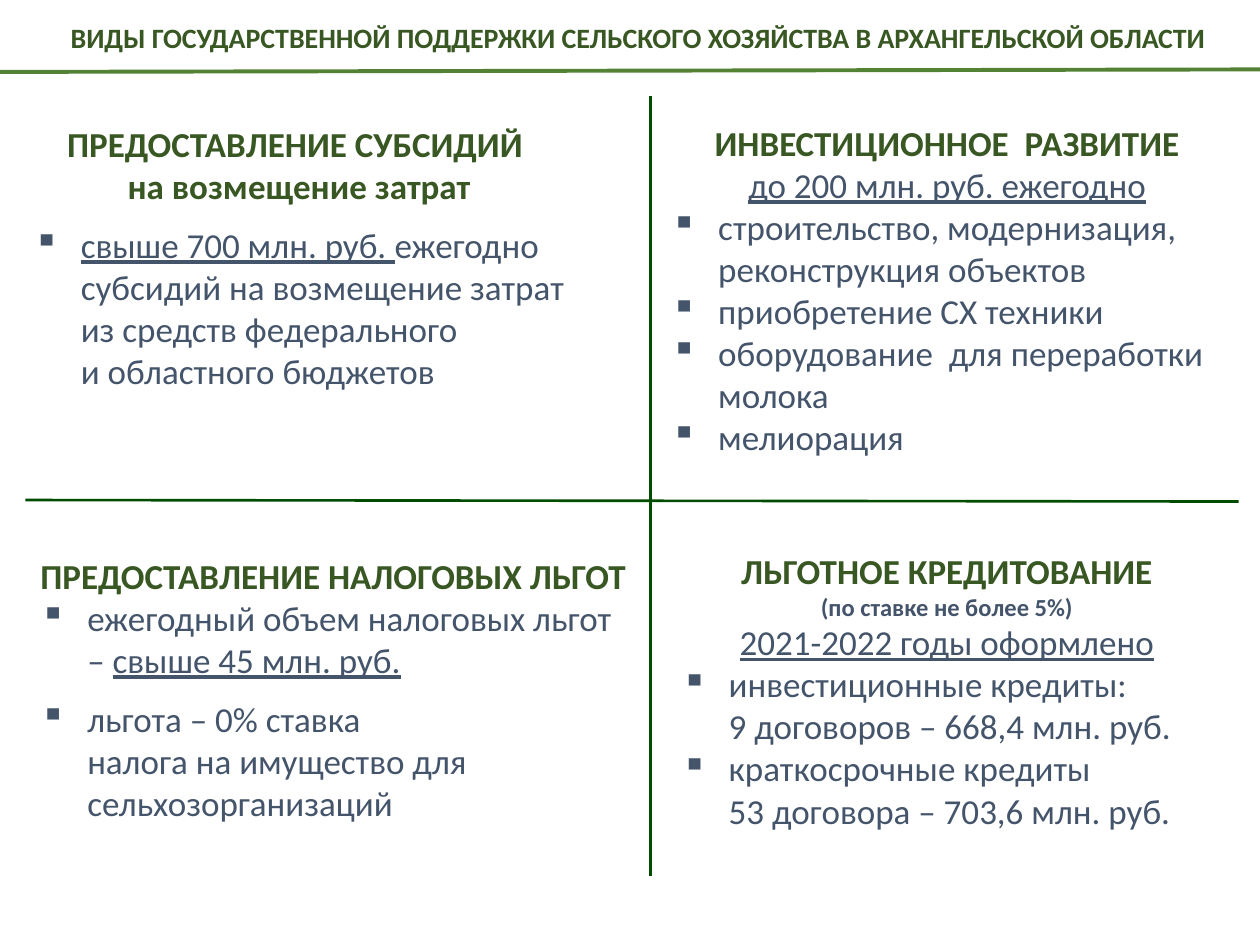
import copy
from dataclasses import dataclass

import pptx
import pptx.dml.color
import pptx.enum.shapes
import pptx.enum.text
import pptx.oxml
import pptx.oxml.ns
import pptx.util
from pptx.util import Cm, Pt

RGBColor = pptx.dml.color.RGBColor
PP_ALIGN = pptx.enum.text.PP_ALIGN

GREEN = RGBColor(0x38, 0x57, 0x23)
SLATE = RGBColor(0x44, 0x54, 0x6A)
RULE_GREEN = RGBColor(0x54, 0x82, 0x35)
CROSS_GREEN = RGBColor(0x00, 0x4C, 0x00)

HEADING = {"size": Pt(20), "bold": True, "color": GREEN}
TITLE = HEADING | {"size": Pt(16)}
BODY = {"size": Pt(20), "bold": False, "color": SLATE}
KEY = BODY | {"underline": True}
NOTE = {"size": Pt(14), "bold": True, "color": SLATE}

INDENT = Cm(0.95)
GAP = Pt(9.75)


@dataclass
class Para:
    runs: list[tuple[str, dict]]
    bullet: bool = False
    before: int = 0


@dataclass
class Block:
    left: float
    top: float
    width: float
    height: float
    paras: list[Para]


@dataclass
class Rule:
    start: tuple[float, float]
    end: tuple[float, float]
    color: RGBColor
    weight: float


def centred(text: str, fmt: dict) -> Para:
    return Para([(text, fmt)])


def bullet(*runs: tuple[str, dict], before: int = 0) -> Para:
    return Para(list(runs), True, before)


BLOCKS = [
    Block(0.97, 0.28, 23.8, 0.94, [
        centred("ВИДЫ ГОСУДАРСТВЕННОЙ ПОДДЕРЖКИ СЕЛЬСКОГО ХОЗЯЙСТВА "
                "В АРХАНГЕЛЬСКОЙ ОБЛАСТИ", TITLE),
    ]),
    Block(0.43, 2.31, 11.2, 5.74, [
        centred("ПРЕДОСТАВЛЕНИЕ СУБСИДИЙ \nна возмещение затрат", HEADING),
        bullet(("свыше 700 млн. руб. ", KEY),
               ("ежегодно \nсубсидий на возмещение затрат из средств "
                "федерального \nи областного бюджетов", BODY), before=GAP),
    ]),
    Block(13.28, 2.29, 11.63, 7.09, [
        centred("ИНВЕСТИЦИОННОЕ  РАЗВИТИЕ", HEADING),
        centred("до 200 млн. руб. ежегодно", KEY),
        bullet(("строительство, модернизация, реконструкция объектов", BODY)),
        bullet(("приобретение СХ техники", BODY)),
        bullet(("оборудование  для переработки молока", BODY)),
        bullet(("мелиорация", BODY)),
    ]),
    Block(0.56, 11.02, 12.32, 5.74, [
        centred("ПРЕДОСТАВЛЕНИЕ НАЛОГОВЫХ ЛЬГОТ", HEADING),
        bullet(("ежегодный объем налоговых льгот \n– ", BODY),
               ("свыше 45 млн. руб.", KEY)),
        bullet(("льгота – 0% ставка \nналога на имущество для "
                "сельхозорганизаций", BODY), before=GAP),
    ]),
    Block(13.49, 10.92, 11.2, 5.99, [
        centred("ЛЬГОТНОЕ КРЕДИТОВАНИЕ", HEADING),
        centred("(по ставке не более 5%)", NOTE),
        centred("2021-2022 годы оформлено", KEY),
        bullet(("инвестиционные кредиты:\n9 договоров – 668,4 млн. руб.", BODY)),
        bullet(("краткосрочные кредиты \n53 договора – 703,6 млн. руб.", BODY)),
    ]),
]

RULES = [
    Rule((25.4, 1.4), (0, 1.45), RULE_GREEN, 2.25),
    Rule((0.51, 10.08), (24.97, 10.11), CROSS_GREEN, 1.5),
    Rule((13.11, 17.65), (13.11, 1.93), CROSS_GREEN, 1.5),
]


def add_runs(p, text: str, fmt: dict) -> None:
    """Add text to a paragraph; each newline becomes a break of the same format."""
    for i, line in enumerate(text.split("\n")):
        if i:
            p.add_line_break()
            br = p._p[-1]
        r = p.add_run()
        r.text = line
        r.font.name = "Calibri"
        for name, value in fmt.items():
            if name == "color":
                r.font.color.rgb = value
            else:
                setattr(r.font, name, value)
        if i:
            br.insert(0, copy.deepcopy(r._r.rPr))


def set_bullet(p) -> None:
    pPr = p._p.get_or_add_pPr()
    pPr.set("marL", str(INDENT))
    pPr.set("indent", str(-INDENT))
    bu = pptx.oxml.ns.qn("a:buChar")
    pPr.append(pPr.makeelement(bu, {"char": "▪"}))


def add_block(s, block: Block) -> None:
    box = (block.left, block.top, block.width, block.height)
    tf = s.shapes.add_textbox(*map(Cm, box)).text_frame
    tf.word_wrap = True
    tf.auto_size = pptx.enum.text.MSO_AUTO_SIZE.SHAPE_TO_FIT_TEXT
    tf.vertical_anchor = pptx.enum.text.MSO_ANCHOR.MIDDLE
    for i, para in enumerate(block.paras):
        p = tf.add_paragraph() if i else tf.paragraphs[0]
        p.alignment = PP_ALIGN.LEFT if para.bullet else PP_ALIGN.CENTER
        if para.before:
            p.space_before = para.before
        if para.bullet:
            set_bullet(p)
        for text, fmt in para.runs:
            add_runs(p, text, fmt)


def add_rule(s, rule: Rule) -> None:
    sp = s.shapes.add_connector(pptx.enum.shapes.MSO_CONNECTOR.STRAIGHT,
                                *map(Cm, rule.start + rule.end))
    sp.line.color.rgb = rule.color
    sp.line.width = Pt(rule.weight)
    spPr = sp._element.spPr
    spPr.append(spPr.makeelement(pptx.oxml.ns.qn("a:effectLst"), {}))


def main() -> None:
    prs = pptx.Presentation()
    prs.slide_width, prs.slide_height = Cm(25.4), Cm(19.05)
    s = prs.slides.add_slide(prs.slide_layouts[6])
    for block in BLOCKS:
        add_block(s, block)
    for rule in RULES:
        add_rule(s, rule)
    prs.save("out.pptx")


if __name__ == "__main__":
    main()
